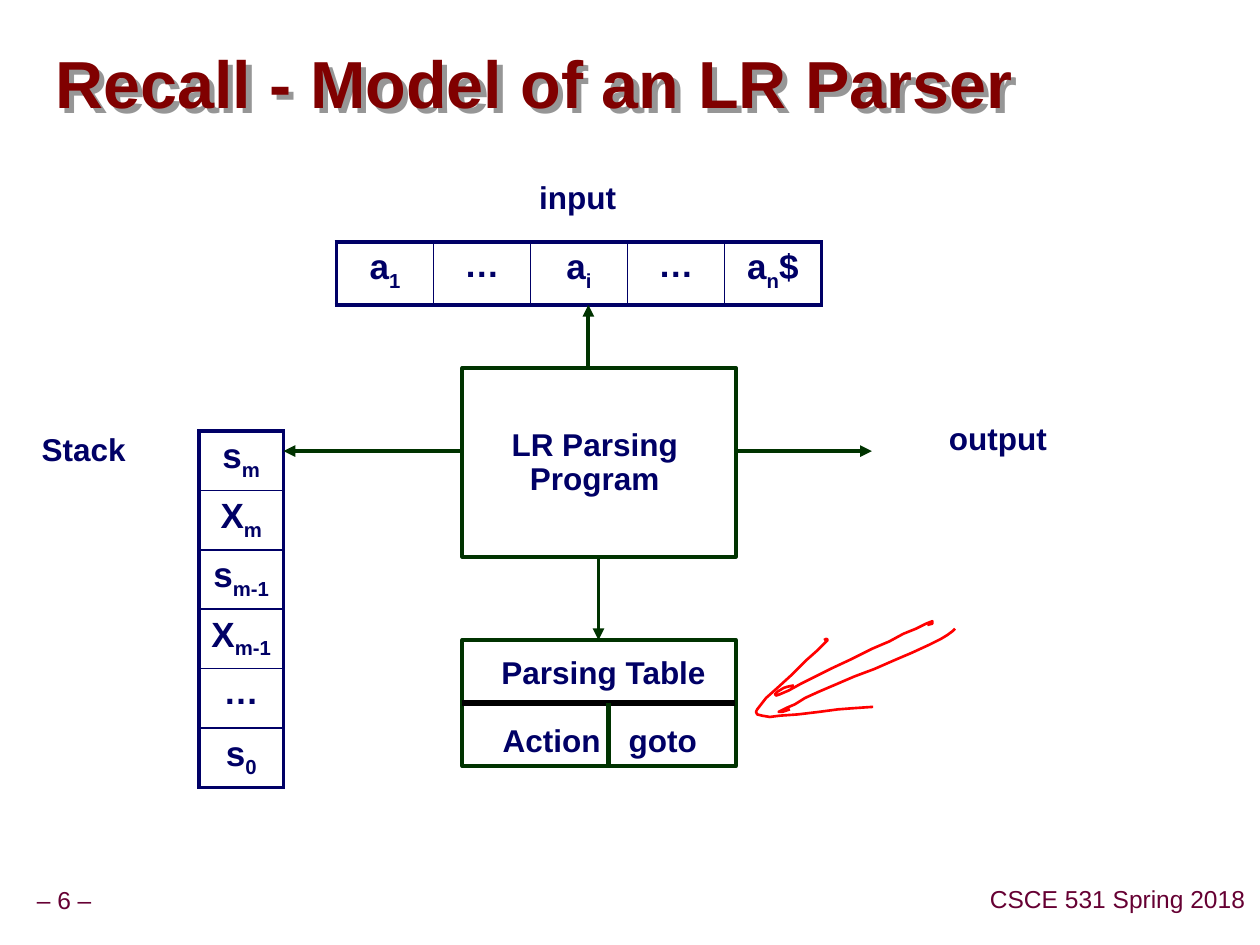
from dataclasses import dataclass

from lxml import etree
from pptx import Presentation
from pptx.dml.color import RGBColor
from pptx.enum.shapes import MSO_CONNECTOR, MSO_SHAPE
from pptx.enum.text import MSO_ANCHOR, MSO_AUTO_SIZE, PP_ALIGN
from pptx.oxml.ns import qn
from pptx.util import Emu, Pt

EMU_PER_PX = 9144  # 100 px to the inch
LEFT, CENTER = PP_ALIGN.LEFT, PP_ALIGN.CENTER
TOP, MIDDLE = MSO_ANCHOR.TOP, MSO_ANCHOR.MIDDLE
GROW, FIXED = MSO_AUTO_SIZE.SHAPE_TO_FIT_TEXT, MSO_AUTO_SIZE.NONE
RECTANGLE, STRAIGHT = MSO_SHAPE.RECTANGLE, MSO_CONNECTOR.STRAIGHT


@dataclass(frozen=True)
class Theme:
    font: str = "Arial"
    navy: str = "000066"
    green: str = "003300"
    black: str = "000000"
    red: str = "FF0000"
    maroon: str = "800000"
    plum: str = "660033"
    shadow: str = "969696"
    title_size: int = 38
    cell_size: int = 20
    label_size: int = 18
    footer_size: int = 14
    thin: float = 1
    ink: float = 1.5
    medium: float = 2.25
    thick: float = 3


THEME = Theme()


@dataclass(frozen=True)
class Label:
    text: str
    left: int
    top: int
    width: int
    height: int
    size: int = THEME.label_size
    color: str = THEME.navy
    bold: bool = True
    align: PP_ALIGN = CENTER
    anchor: MSO_ANCHOR = TOP
    spacing: float = 0.9
    margin: int = 5
    wrap: bool = False
    grow: bool = True


@dataclass(frozen=True)
class Line:
    start: tuple[int, int]
    end: tuple[int, int]
    color: str = THEME.green
    width: float = THEME.medium
    arrow: bool = True


@dataclass(frozen=True)
class Grid:
    left: int
    top: int
    width: int
    height: int
    rows: list  # each cell holds (base, subscript, base, ...)


TITLE = Label("Recall - Model of an LR Parser", 44, 27, 953, 85, THEME.title_size,
              THEME.maroon, align=LEFT, anchor=MIDDLE, spacing=0.87, margin=0,
              wrap=True, grow=False)
FOOTERS = [
    Label("– 6 –", 18, 700, 66, 31, THEME.footer_size, THEME.plum, False, anchor=MIDDLE),
    Label("CSCE 531 Spring 2018", 780, 699, 214, 31, THEME.footer_size, THEME.plum, False,
          anchor=MIDDLE),
]
LABELS = [
    Label("Stack", 28, 340, 77, 37),
    Label("input", 420, 140, 77, 37),
    Label("output", 748, 331, 88, 37),
    Label("LR Parsing\nProgram", 401, 336, 142, 64),
]
TABLE_LABEL = Label("Parsing Table\nAction\tgoto", 392, 517, 174, 91, wrap=True)
INPUT = Grid(267, 192, 385, 50, [[("a", "1"), ("…",), ("a", "i"), ("…",), ("a", "n", "$")]])
STACK = Grid(158, 342, 67, 283, [[("s", "m")], [("X", "m")], [("s", "m-1")],
                                 [("X", "m-1")], [("…",)], [("s", "0")]])
BOXES = [(367, 292, 217, 150), (367, 508, 217, 100)]
LINES = [
    Line((475, 442), (475, 508)),
    Line((467, 292), (467, 242)),
    Line((583, 358), (692, 358)),
    Line((367, 358), (225, 358)),
    Line((367, 558), (583, 558), THEME.black, THEME.thick, False),
    Line((483, 558), (483, 608), THEME.green, THEME.thick, False),
]
# Hand-drawn arrow: two shaft strokes and the head
STROKES = [
    [(630, 544), (625, 545), (622, 546), (617, 549), (615, 551), (616, 552), (619, 551),
     (626, 548), (635, 543), (647, 537), (661, 530), (676, 523), (692, 515), (706, 509),
     (717, 503), (727, 499), (735, 495), (740, 493), (740, 495), (736, 496)],
    [(627, 563), (621, 565), (618, 565), (624, 562), (631, 559), (639, 554), (650, 549),
     (664, 543), (678, 537), (694, 531), (710, 524), (724, 518), (737, 512), (747, 507),
     (752, 504), (756, 501), (758, 499)],
    [(654, 508), (656, 507), (657, 508), (656, 509), (649, 516), (640, 524), (629, 535),
     (617, 546), (608, 554), (601, 563), (600, 565), (601, 567), (605, 568), (611, 569),
     (619, 568), (633, 567), (650, 565), (665, 563), (678, 562), (693, 561)],
]


def px(value: int) -> Emu:
    return Emu(value * EMU_PER_PX)


def format_font(font, size: int, color: str, bold: bool) -> None:
    font.name, font.size, font.bold = THEME.font, Pt(size), bold
    font.color.rgb = RGBColor.from_string(color)


def format_line(line, color: str, width: float) -> None:
    line.color.rgb = RGBColor.from_string(color)
    line.width = Pt(width)


def add_color(parent, color: str) -> None:
    etree.SubElement(parent, qn("a:srgbClr"), val=color)


def add_label(slide, label: Label):
    shape = slide.shapes.add_textbox(*map(px, (label.left, label.top, label.width, label.height)))
    frame = shape.text_frame
    frame.text = label.text
    frame.word_wrap = label.wrap
    frame.auto_size = GROW if label.grow else FIXED
    frame.vertical_anchor = label.anchor
    frame.margin_left = frame.margin_right = px(label.margin)
    frame.margin_top = frame.margin_bottom = px(label.margin)
    for paragraph in frame.paragraphs:
        paragraph.alignment, paragraph.line_spacing = label.align, label.spacing
        for run in paragraph.runs:
            format_font(run.font, label.size, label.color, label.bold)
    return shape


def add_shadow(shape) -> None:
    """An unfilled box casts the shadow of its text."""
    effects = etree.SubElement(shape._element.spPr, qn("a:effectLst"))
    shadow = etree.SubElement(effects, qn("a:outerShdw"), dist="53882", dir="2700000",
                              algn="ctr", rotWithShape="0")
    add_color(shadow, THEME.shadow)


def set_tab_columns(paragraph, indent: int, tab: int) -> None:
    properties = paragraph._p.get_or_add_pPr()
    properties.set("marL", str(px(indent)))
    properties.set("indent", "0")
    tabs = etree.SubElement(properties, qn("a:tabLst"))
    etree.SubElement(tabs, qn("a:tab"), pos=str(px(tab)), algn="l")
    paragraph.alignment = LEFT


def set_borders(cell, outer_sides: dict[str, bool]) -> None:
    properties = cell._tc.get_or_add_tcPr()
    for index, (side, outer) in enumerate(outer_sides.items()):
        width = Pt(THEME.medium if outer else THEME.thin)
        border = etree.Element(qn(f"a:ln{side}"), w=str(width))
        add_color(etree.SubElement(border, qn("a:solidFill")), THEME.navy)
        properties.insert(index, border)


def add_grid(slide, grid: Grid) -> None:
    row_count, column_count = len(grid.rows), len(grid.rows[0])
    table = slide.shapes.add_table(row_count, column_count, *map(
        px, (grid.left, grid.top, grid.width, grid.height))).table
    table.first_row = table.horz_banding = False
    for r, row in enumerate(grid.rows):
        for c, parts in enumerate(row):
            cell = table.cell(r, c)
            cell.margin_left = cell.margin_right = cell.margin_top = cell.margin_bottom = px(5)
            cell.fill.background()
            set_borders(cell, {"L": c == 0, "R": c == column_count - 1,
                               "T": r == 0, "B": r == row_count - 1})
            paragraph = cell.text_frame.paragraphs[0]
            paragraph.alignment, paragraph.line_spacing = CENTER, 0.95
            for index, part in enumerate(parts):
                run = paragraph.add_run()
                run.text = part
                format_font(run.font, THEME.cell_size, THEME.navy, True)
                if index % 2:
                    run._r.get_or_add_rPr().set("baseline", "-25000")


def add_box(slide, box: tuple[int, int, int, int]) -> None:
    shape = slide.shapes.add_shape(RECTANGLE, *map(px, box))
    shape.shadow.inherit = False
    shape.fill.background()
    format_line(shape.line, THEME.green, THEME.medium)


def add_line(slide, line: Line) -> None:
    connector = slide.shapes.add_connector(STRAIGHT, *map(px, line.start + line.end))
    format_line(connector.line, line.color, line.width)
    if line.arrow:
        etree.SubElement(connector.line._get_or_add_ln(), qn("a:tailEnd"), type="triangle")
    etree.SubElement(connector._element.spPr, qn("a:effectLst"))


def add_stroke(group, points: list[tuple[int, int]]) -> None:
    builder = group.shapes.build_freeform(*points[0], scale=EMU_PER_PX)
    builder.add_line_segments(points[1:], close=False)
    shape = builder.convert_to_shape()
    shape.shadow.inherit = False
    shape.fill.background()
    format_line(shape.line, THEME.red, THEME.ink)


def main() -> None:
    presentation = Presentation()
    presentation.slide_width, presentation.slide_height = px(1000), px(750)
    slide = presentation.slides.add_slide(presentation.slide_layouts[6])

    # Footer and title
    for footer in FOOTERS:
        add_label(slide, footer)
    add_shadow(add_label(slide, TITLE))

    # Input tape, program, parsing table and stack
    add_grid(slide, INPUT)
    for box in BOXES:
        add_box(slide, box)
    add_grid(slide, STACK)
    for label in LABELS:
        add_label(slide, label)
    columns = add_label(slide, TABLE_LABEL).text_frame.paragraphs[1]
    set_tab_columns(columns, 2, 112)
    columns.space_before = Pt(19)

    # Arrows, dividers and the hand-drawn arrow
    for line in LINES:
        add_line(slide, line)
    group = slide.shapes.add_group_shape()
    for stroke in STROKES:
        add_stroke(group, stroke)

    presentation.save("out.pptx")


if __name__ == "__main__":
    main()
